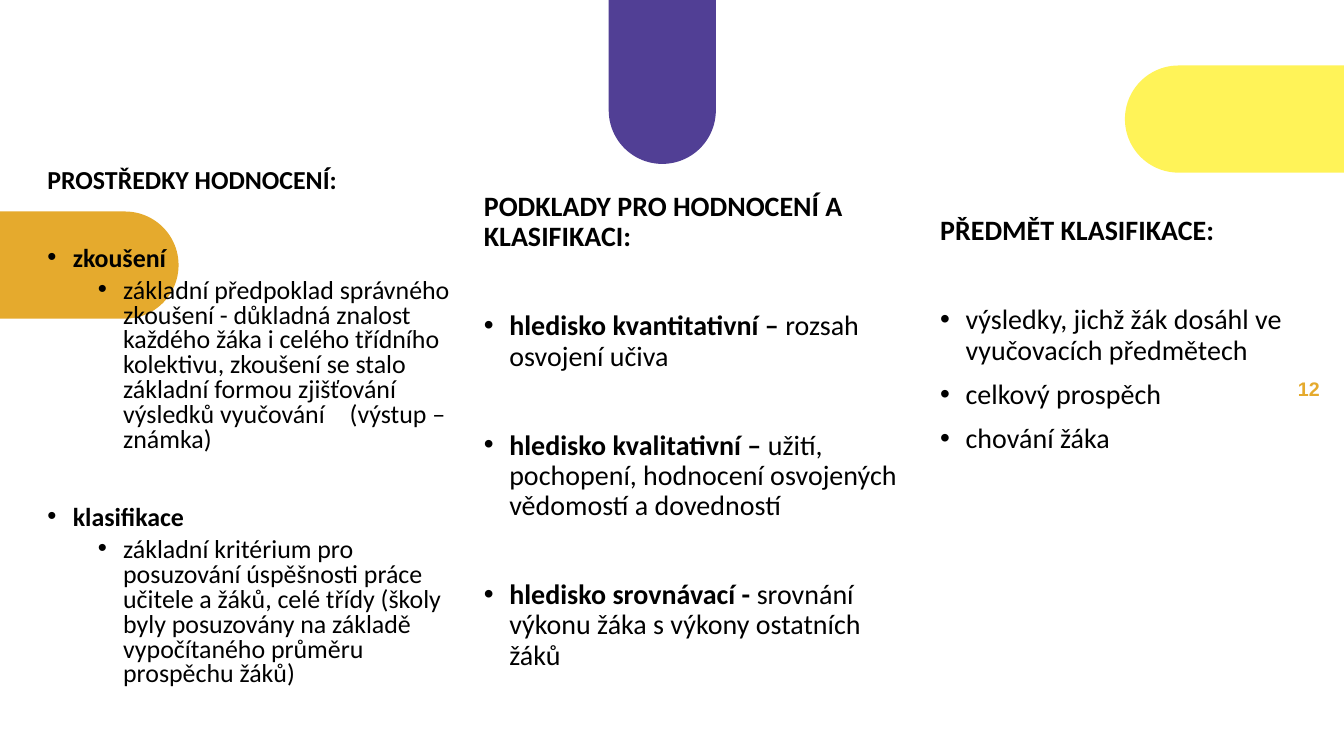
"""Build a slide on the means, grounds and subject of pupil assessment."""
import dataclasses

import pptx
import pptx.dml.color
import pptx.enum.shapes
import pptx.enum.text
import pptx.oxml.ns
import pptx.util
from lxml import etree

Cm = pptx.util.Cm
Pt = pptx.util.Pt
RGB = pptx.dml.color.RGBColor
Align = pptx.enum.text.PP_ALIGN
Anchor = pptx.enum.text.MSO_ANCHOR


@dataclasses.dataclass(frozen=True)
class Theme:
    """Hold the colours, fonts and type sizes of the slide."""
    text: RGB = RGB(0, 0, 0)
    yellow: RGB = RGB(0xFF, 0xF3, 0x58)
    purple: RGB = RGB(0x51, 0x3F, 0x95)
    orange: RGB = RGB(0xE5, 0xAA, 0x2D)
    body_font: str = "Calibri"
    number_font: str = "Arial"
    dense_size: float = 18.5
    body_size: float = 20
    number_size: float = 14


THEME = Theme()
HEADING, POINT, DETAIL = "heading", "point", "detail"
LEFT_INDENT = {HEADING: 0, POINT: 0.64, DETAIL: 1.91}
HANGING = 0.64

# Each paragraph: kind, whether a wide gap precedes it, bold part, regular part
MEANS = [
    (HEADING, False, "PROSTŘEDKY HODNOCENÍ:", ""),
    (POINT, True, "zkoušení", ""),
    (DETAIL, False, "", "základní předpoklad správného zkoušení - důkladná znalost "
     "každého žáka i celého třídního kolektivu, zkoušení se stalo základní formou "
     "zjišťování výsledků vyučování \t(výstup – známka)"),
    (POINT, True, "klasifikace", ""),
    (DETAIL, False, "", "základní kritérium pro posuzování úspěšnosti práce učitele "
     "a žáků, celé třídy (školy byly posuzovány na základě vypočítaného průměru "
     "prospěchu žáků)"),
]
GROUNDS = [
    (HEADING, False, "PODKLADY PRO HODNOCENÍ A KLASIFIKACI:", ""),
    (POINT, True, "hledisko kvantitativní – ", "rozsah osvojení učiva"),
    (POINT, True, "hledisko kvalitativní – ",
     "užití, pochopení, hodnocení osvojených vědomostí a dovedností"),
    (POINT, True, "hledisko srovnávací - ", "srovnání výkonu žáka s výkony ostatních žáků"),
]
SUBJECT = [
    (HEADING, False, "PŘEDMĚT KLASIFIKACE:", ""),
    (POINT, True, "", "výsledky, jichž žák dosáhl ve vyučovacích předmětech"),
    (POINT, False, "", "celkový prospěch"),
    (POINT, False, "", "chování žáka"),
]


def place(shape, box):
    """Move a shape to a box given in centimetres."""
    shape.left, shape.top, shape.width, shape.height = (Cm(length) for length in box)


def set_bullet(paragraph, kind):
    """Give a paragraph its indent and bullet."""
    properties = paragraph._p.get_or_add_pPr()
    properties.set("marL", str(Cm(LEFT_INDENT[kind])))
    properties.set("indent", str(0 if kind == HEADING else -Cm(HANGING)))
    qn = pptx.oxml.ns.qn
    if kind == HEADING:
        etree.SubElement(properties, qn("a:buNone"))
    else:
        etree.SubElement(properties, qn("a:buFont"), typeface=THEME.number_font)
        etree.SubElement(properties, qn("a:buChar"), char="•")


def style_font(font, name, size, color):
    """Set the face, size and colour of a font."""
    font.name, font.size = name, Pt(size)
    font.color.rgb = color


def fill_column(column, box, entries, size, spacing, alignment):
    """Place a body placeholder in its box and write a heading with its list."""
    place(column, box)
    frame = column.text_frame
    frame.word_wrap = True
    frame.auto_size = pptx.enum.text.MSO_AUTO_SIZE.NONE
    frame.vertical_anchor = Anchor.TOP
    wide_gap = 20 + round(size * 1.22 * spacing)
    for index, (kind, gap, bold, regular) in enumerate(entries):
        paragraph = frame.paragraphs[0] if index == 0 else frame.add_paragraph()
        set_bullet(paragraph, kind)
        paragraph.level = 1 if kind == DETAIL else 0
        paragraph.alignment = Align.LEFT if kind == DETAIL else alignment
        paragraph.line_spacing = spacing
        paragraph.space_before = Pt(wide_gap if gap else 5 if kind == DETAIL else 10)
        style_font(paragraph.font, THEME.body_font, size, THEME.text)
        for words, is_bold in ((bold, True), (regular, False)):
            if words:
                run = paragraph.add_run()
                run.text = words
                run.font.bold = is_bold


def add_tab(slide, box, rotation, color):
    """Draw a tab with one round end that fills the box after rotation."""
    left, top, width, height = box
    thickness, length = min(width, height), max(width, height)
    tab = slide.shapes.add_shape(
        pptx.enum.shapes.MSO_SHAPE.ROUND_2_SAME_RECTANGLE, 0, 0, 0, 0)
    place(tab, (left + (width - thickness) / 2, top + (height - length) / 2,
                thickness, length))
    tab.adjustments[0], tab.adjustments[1] = 0.5, 0
    tab.rotation = rotation
    tab.shadow.inherit = False
    tab.fill.solid()
    tab.fill.fore_color.rgb = color
    tab.line.fill.background()


def add_page_number(slide, box, number):
    """Write the page number in its box."""
    frame = slide.shapes.add_textbox(*(Cm(length) for length in box)).text_frame
    frame.word_wrap = False
    frame.vertical_anchor = Anchor.MIDDLE
    paragraph = frame.paragraphs[0]
    paragraph.text = number
    paragraph.alignment = Align.RIGHT
    paragraph.font.bold = True
    style_font(paragraph.font, THEME.number_font, THEME.number_size, THEME.orange)


def build_assessment_slide(presentation):
    """Build the slide with three columns and three coloured tabs."""
    slide = presentation.slides.add_slide(presentation.slide_layouts[4])
    bodies = {body.placeholder_format.idx: body for body in slide.placeholders}
    for unused in (bodies[0], bodies[3]):
        unused._element.getparent().remove(unused._element)
    add_page_number(slide, (32.39, 9.37, 1.12, 0.86), "12")
    add_tab(slide, (28.35, 1.65, 5.52, 2.7), 270, THEME.yellow)
    add_tab(slide, (15.34, 0, 2.7, 4.13), 180, THEME.purple)
    add_tab(slide, (0, 5.33, 4.5, 2.7), 90, THEME.orange)
    columns = (
        (bodies[1], (0.94, 4.14, 11.23, 13.77), MEANS, THEME.dense_size, 0.8, Align.JUSTIFY),
        (bodies[2], (11.94, 4.72, 11, 13.54), GROUNDS, THEME.body_size, 0.9, Align.LEFT),
        (bodies[4], (23.44, 5.33, 9.5, 12.57), SUBJECT, THEME.body_size, 0.9, Align.LEFT),
    )
    for column in columns:
        fill_column(*column)
        element = column[0]._element
        element.getparent().append(element)


def main():
    """Create and save the presentation."""
    presentation = pptx.Presentation()
    presentation.slide_width, presentation.slide_height = Cm(33.87), Cm(19.05)
    build_assessment_slide(presentation)
    presentation.save("out.pptx")


if __name__ == "__main__":
    main()
